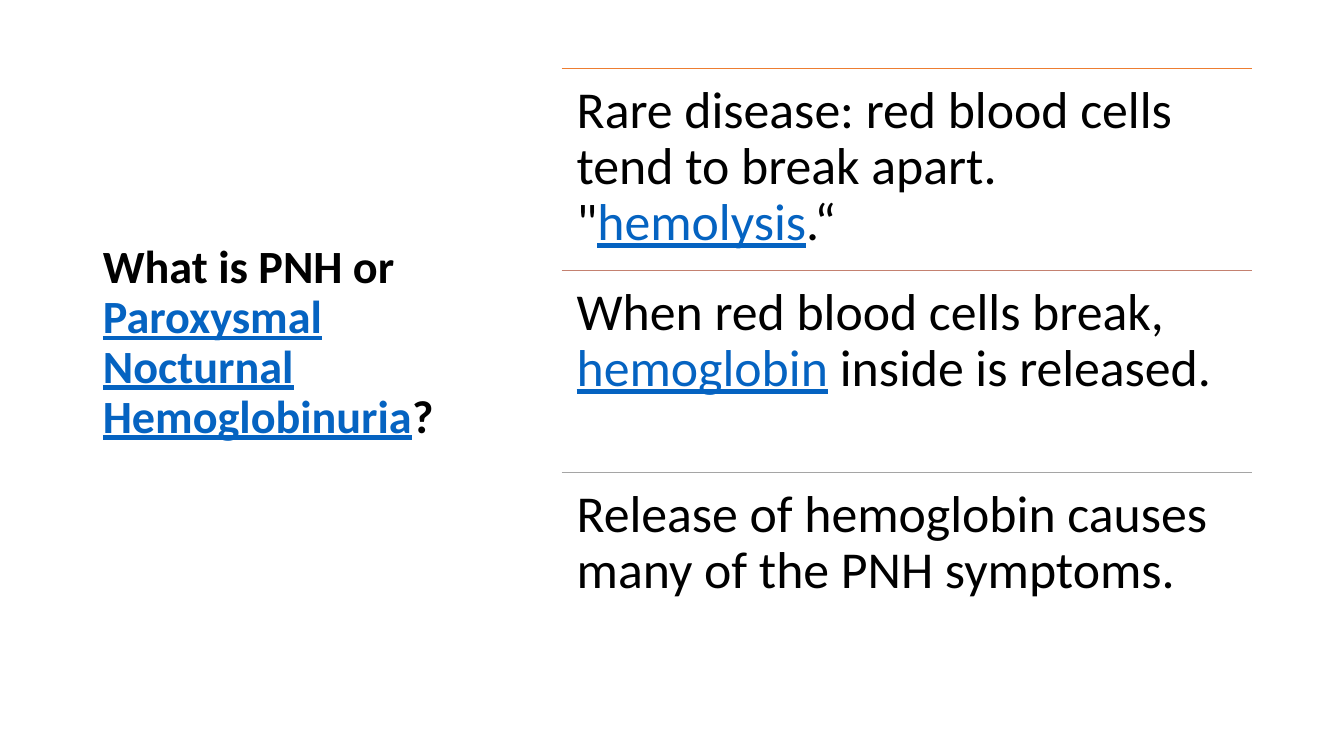
from lxml import etree
from pptx import Presentation
from pptx.dml.color import RGBColor
from pptx.enum.shapes import MSO_CONNECTOR
from pptx.enum.text import MSO_ANCHOR, MSO_AUTO_SIZE, PP_ALIGN
from pptx.oxml.ns import qn
from pptx.util import Inches, Pt

STRAIGHT = MSO_CONNECTOR.STRAIGHT
TOP, MIDDLE = MSO_ANCHOR.TOP, MSO_ANCHOR.MIDDLE
NO_AUTOFIT = MSO_AUTO_SIZE.NONE
LEFT = PP_ALIGN.LEFT

BLACK = RGBColor(0x00, 0x00, 0x00)
TERM_BLUE = RGBColor(0x05, 0x63, 0xC1)
ORANGE = RGBColor(0xED, 0x7D, 0x31)
ROSE = RGBColor(0xC4, 0x81, 0x70)
GRAY = RGBColor(0xA5, 0xA5, 0xA5)

FONT = "Calibri"
PANEL_LEFT, PANEL_TOP = 5.57, 0.68
PANEL_WIDTH, PANEL_HEIGHT = 6.85, 2.0
PANEL_STEP = 2.005
PANEL_INSET = Inches(0.15)

# Each text is (before, underlined term, after)
TITLE = ("What is PNH or ", "Paroxysmal Nocturnal Hemoglobinuria", "?")
FACTS = [
    (ORANGE, ('Rare disease: red blood cells tend to break apart. "',
              "hemolysis", ".“")),
    (ROSE, ("When red blood cells break,  ",
            "hemoglobin", " inside is released.")),
    (GRAY, ("Release of hemoglobin causes many of the PNH symptoms.", "", "")),
]


def set_attributes(target, values):
    for name, value in values.items():
        setattr(target, name, value)


def write_text(shape, parts, size, bold, frame_format):
    """Write one paragraph whose middle part is an underlined term."""
    frame = shape.text_frame
    set_attributes(frame, {"word_wrap": True, "auto_size": NO_AUTOFIT,
                           **frame_format})
    paragraph = frame.paragraphs[0]
    set_attributes(paragraph, {"alignment": LEFT, "line_spacing": 0.9})
    for index, text in enumerate(parts):
        if not text:
            continue
        is_term = index == 1
        run = paragraph.add_run()
        run.text = text
        set_attributes(run.font, {"name": FONT, "size": Pt(size),
                                  "bold": bold, "underline": is_term})
        run.font.color.rgb = TERM_BLUE if is_term else BLACK


def add_title(slide):
    title = slide.shapes.title
    set_attributes(title, {"left": Inches(0.92), "top": Inches(0.61),
                           "width": Inches(3.69), "height": Inches(6.09)})
    # The deeper bottom margin lifts the title above the middle
    write_text(title, TITLE, 33, True,
               {"vertical_anchor": MIDDLE, "margin_bottom": Inches(0.55)})


def add_rule(slide, top, color):
    rule = slide.shapes.add_connector(
        STRAIGHT, Inches(PANEL_LEFT), Inches(top),
        Inches(PANEL_LEFT + PANEL_WIDTH), Inches(top))
    rule.line.color.rgb = color
    rule.line.width = Pt(1)
    etree.SubElement(rule._element.spPr, qn("a:effectLst"))


def add_fact(slide, top, parts):
    box = slide.shapes.add_textbox(
        Inches(PANEL_LEFT), Inches(top),
        Inches(PANEL_WIDTH), Inches(PANEL_HEIGHT))
    margins = {f"margin_{side}": PANEL_INSET
               for side in ("left", "top", "right", "bottom")}
    write_text(box, parts, 37, False, {"vertical_anchor": TOP, **margins})


def main():
    presentation = Presentation()
    presentation.slide_width = Inches(13.33)
    presentation.slide_height = Inches(7.5)
    slide = presentation.slides.add_slide(presentation.slide_layouts[5])

    # Question on the left
    add_title(slide)

    # Ruled facts on the right
    for index, (color, parts) in enumerate(FACTS):
        top = PANEL_TOP + index * PANEL_STEP
        add_rule(slide, top, color)
        add_fact(slide, top, parts)

    presentation.save("out.pptx")


if __name__ == "__main__":
    main()
